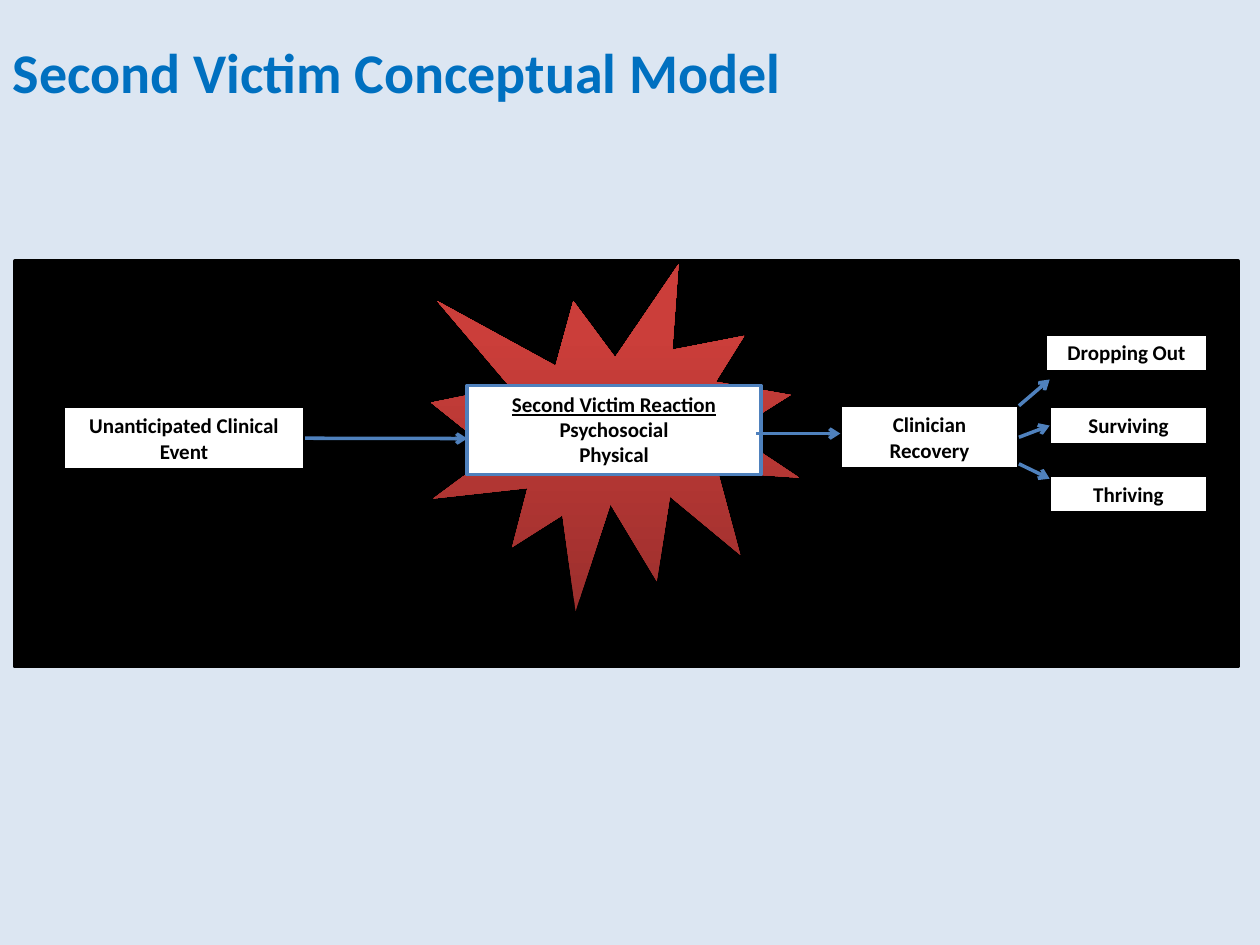
from lxml import etree
from pptx import Presentation
from pptx import util as u
from pptx.dml.color import RGBColor
from pptx.enum import shapes, text
from pptx.oxml.ns import qn

BACK = RGBColor(0xDC, 0xE6, 0xF2)
HEAD = RGBColor(0x00, 0x70, 0xC0)
BLUE = RGBColor(0x4F, 0x81, 0xBD)
BLACK = RGBColor(0, 0, 0)
WHITE = RGBColor(255, 255, 255)
DARK = RGBColor(0x9C, 0x2F, 0x2D)
RED = RGBColor(0xCB, 0x3E, 0x3A)


class Board:
    """Holds the style and the current slide."""
    font = "Calibri"
    size = u.Pt(12)
    width = u.Pt(2)

    def __init__(self, deck):
        self.slide = deck.slides.add_slide(deck.slide_layouts[5])
        fill = self.slide.background.fill
        fill.solid()
        fill.fore_color.rgb = BACK

    def style(self, para, size, color, align):
        para.alignment = align
        for run in para.runs:
            run.font.name = self.font
            run.font.size = size
            run.font.bold = True
            run.font.color.rgb = color

    def title(self, words, left, top, width, height):
        title = self.slide.shapes.title
        title.left, title.top = u.Cm(left), u.Cm(top)
        title.width, title.height = u.Cm(width), u.Cm(height)
        frame = title.text_frame
        frame.text = words
        frame.vertical_anchor = text.MSO_ANCHOR.MIDDLE
        self.style(frame.paragraphs[0], u.Pt(32), HEAD, text.PP_ALIGN.LEFT)

    def group(self):
        return self.slide.shapes.add_group_shape()

    def shape(self, kind, left, top, width, height, group=None):
        owner = group or self.slide
        shape = owner.shapes.add_shape(
            kind, u.Cm(left), u.Cm(top), u.Cm(width), u.Cm(height))
        shape.shadow.inherit = False
        return shape

    def box(self, words, left, top, width, height, fill=WHITE, line=BLACK, group=None):
        box = self.shape(shapes.MSO_SHAPE.RECTANGLE, left, top, width, height, group)
        box.fill.solid()
        box.fill.fore_color.rgb = fill
        box.line.color.rgb = line
        box.line.width = self.width
        if words:
            frame = box.text_frame
            frame.text = words
            frame.word_wrap = True
            frame.auto_size = text.MSO_AUTO_SIZE.SHAPE_TO_FIT_TEXT
            frame.vertical_anchor = text.MSO_ANCHOR.TOP
            for para in frame.paragraphs:
                self.style(para, self.size, BLACK, text.PP_ALIGN.CENTER)
        return box

    def burst(self, left, top, width, height, group):
        burst = self.shape(shapes.MSO_SHAPE.EXPLOSION1, left, top, width, height, group)
        burst.line.fill.background()
        burst.fill.gradient()
        burst.fill.gradient_angle = 90
        for stop, color, place in zip(burst.fill.gradient_stops, (DARK, RED), (0, 0.8)):
            stop.color.rgb = color
            stop.position = place

    def arrow(self, x1, y1, x2, y2, start=None, end=None):
        arrow = self.slide.shapes.add_connector(
            shapes.MSO_CONNECTOR.STRAIGHT, u.Cm(x1), u.Cm(y1), u.Cm(x2), u.Cm(y2))
        if start:
            arrow.begin_connect(start, 3)
        if end:
            arrow.end_connect(end, 1)
        arrow.line.color.rgb = BLUE
        arrow.line.width = self.width
        etree.SubElement(arrow.line._get_or_add_ln(), qn("a:tailEnd"), type="arrow")
        etree.SubElement(arrow._element.spPr, qn("a:effectLst"))


def main():
    deck = Presentation()
    deck.slide_width, deck.slide_height = u.Cm(25.4), u.Cm(19.05)
    board = Board(deck)
    board.title("Second Victim Conceptual Model", 0, 0.33, 21.89, 2.21)

    # Panel and triggering event
    board.box("", 0.3, 5.26, 24.66, 8.18, fill=BLACK)
    event = board.box("Unanticipated Clinical Event", 1.27, 8.2, 4.88, 1.27)

    # Reaction on its burst
    group = board.group()
    board.burst(8.69, 5.33, 7.42, 6.99, group)
    react = board.box("Second Victim Reaction\nPsychosocial\nPhysical",
                      9.42, 7.77, 5.92, 1.8, line=BLUE, group=group)
    react.text_frame.paragraphs[0].runs[0].font.underline = True

    # Recovery and its outcomes
    heal = board.box("Clinician Recovery", 16.94, 8.18, 3.6, 1.27)
    right = 24.34
    board.box("Dropping Out", 21.08, 6.73, right - 21.08, 0.76)
    live = board.box("Surviving", 21.16, 8.2, right - 21.16, 0.76)
    board.box("Thriving", 21.16, 9.58, right - 21.16, 0.76)

    # Arrows along the path, then out to the outcomes
    board.arrow(6.15, 8.84, 9.42, 8.84, start=event)
    board.arrow(15.24, 8.74, 16.94, 8.74)
    board.arrow(20.54, 8.18, 21.16, 7.65)
    board.arrow(20.54, 8.82, 21.16, 8.58, start=heal, end=live)
    board.arrow(20.54, 9.35, 21.16, 9.65)

    deck.save("out.pptx")


if __name__ == "__main__":
    main()
